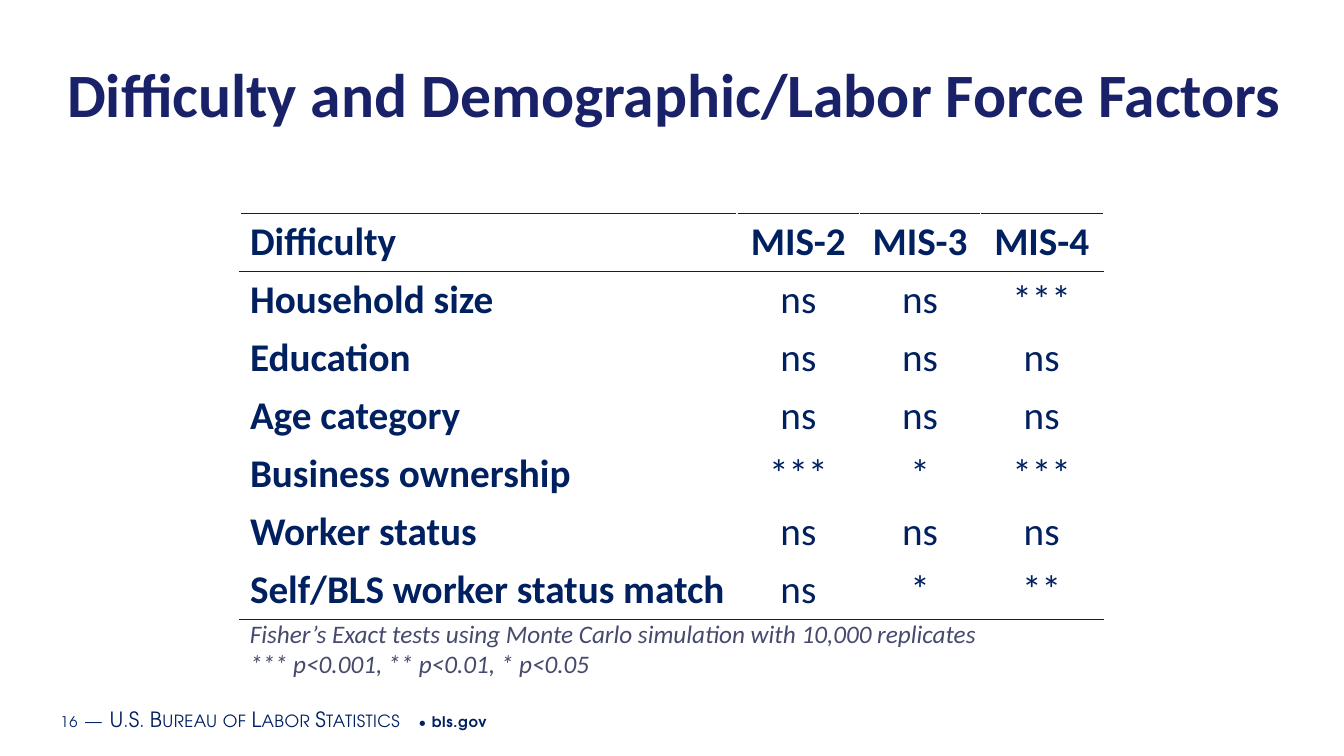
"""Build the slide on difficulty and demographic or labor force factors."""
from dataclasses import dataclass

from lxml import etree
from pptx import Presentation
from pptx.dml.color import RGBColor
from pptx.enum.text import MSO_ANCHOR, PP_ALIGN
from pptx.oxml.ns import qn
from pptx.util import Pt

TOP, MIDDLE = MSO_ANCHOR.TOP, MSO_ANCHOR.MIDDLE
LEFT, CENTER = PP_ALIGN.LEFT, PP_ALIGN.CENTER


@dataclass(frozen=True)
class Theme:
    body_font: str = "Calibri"
    footer_font: str = "TeX Gyre Adventor"
    title_color: str = "192168"
    navy: str = "002060"
    note_color: str = "464A6E"
    title_size: float = 44
    table_size: float = 28
    note_size: float = 18
    gap_size: float = 16
    agency_size: float = 15
    footer_size: float = 10.5


theme = Theme()


def style(font, name, size, color, bold=False, italic=False):
    font.name, font.size, font.bold, font.italic = name, Pt(size), bold, italic
    font.color.rgb = RGBColor.from_string(color)


def add_border(cell, tag, position):
    line = etree.Element(qn(tag), w=str(Pt(1)))
    fill = etree.SubElement(line, qn("a:solidFill"))
    etree.SubElement(fill, qn("a:srgbClr"), val=theme.navy)
    cell._tc.get_or_add_tcPr().insert(position, line)


deck = Presentation()
deck.slide_width, deck.slide_height = Pt(960), Pt(540)
page = deck.slides.add_slide(deck.slide_layouts.get_by_name("Title Only"))

title = page.shapes.title
title.left, title.top, title.width, title.height = Pt(26.6), Pt(36), Pt(911), Pt(63.4)
title.text_frame.text = "Difficulty and Demographic/Labor Force Factors"
title.text_frame.vertical_anchor = TOP
title.text_frame.paragraphs[0].alignment = CENTER
style(title.text_frame.paragraphs[0].runs[0].font, theme.body_font,
      theme.title_size, theme.title_color, bold=True)

rows = [
    ("Difficulty", "MIS-2", "MIS-3", "MIS-4"),
    ("Household size", "ns", "ns", "***"),
    ("Education", "ns", "ns", "ns"),
    ("Age category", "ns", "ns", "ns"),
    ("Business ownership", "***", "*", "***"),
    ("Worker status", "ns", "ns", "ns"),
    ("Self/BLS worker status match", "ns", "*", "**"),
]
column_widths = [355, 87.8, 86, 87.8]
row_height = 41.4
frame = page.shapes.add_table(len(rows), len(column_widths), Pt(171.4), Pt(152.4),
                              Pt(sum(column_widths)), Pt(row_height * len(rows)))
table = frame.table
table.first_row = table.horz_banding = False
for column, width in zip(table.columns, column_widths):
    column.width = Pt(width)
for row_index, values in enumerate(rows):
    table.rows[row_index].height = Pt(row_height)
    for column_index, value in enumerate(values):
        cell = table.cell(row_index, column_index)
        cell.text = value
        cell.fill.background()
        para = cell.text_frame.paragraphs[0]
        para.alignment = CENTER if column_index else LEFT
        style(para.runs[0].font, theme.body_font, theme.table_size, theme.navy,
              bold=row_index == 0 or column_index == 0)
        if row_index in (0, len(rows) - 1):
            add_border(cell, "a:lnB", 0)
        if row_index in (0, 1):
            add_border(cell, "a:lnT", 0)

note = page.shapes.add_textbox(Pt(171.4), Pt(437.8), Pt(617), Pt(51)).text_frame
note.word_wrap = True
note.text = ("Fisher’s Exact tests using Monte Carlo simulation with 10,000 replicates\n"
             "*** p<0.001, ** p<0.01, * p<0.05")
for para in note.paragraphs:
    style(para.runs[0].font, theme.body_font, theme.note_size, theme.note_color, italic=True)

footer = page.shapes.add_textbox(Pt(38.2), Pt(499), Pt(610), Pt(28.8)).text_frame
footer.word_wrap = True
footer.vertical_anchor = MIDDLE
footer.margin_left = footer.margin_right = Pt(5)
footer.margin_top = footer.margin_bottom = Pt(2.9)
footer_parts = [
    ("16", theme.footer_size, False, False),
    (" ", theme.gap_size, False, False),
    ("—", theme.agency_size, True, False),
    (" ", theme.gap_size, False, False),
    ("U.S. Bureau of Labor Statistics", theme.agency_size, True, False),
    (" • ", theme.footer_size, False, False),
    ("bls.gov", theme.footer_size, False, True),
]
for text, size, small_caps, bold in footer_parts:
    span = footer.paragraphs[0].add_run()
    span.text = text
    style(span.font, theme.footer_font, size, theme.navy, bold=bold)
    properties = span._r.get_or_add_rPr()
    properties.set("spc", "30" if small_caps else "50")
    if small_caps:
        properties.set("cap", "small")

deck.save("out.pptx")
